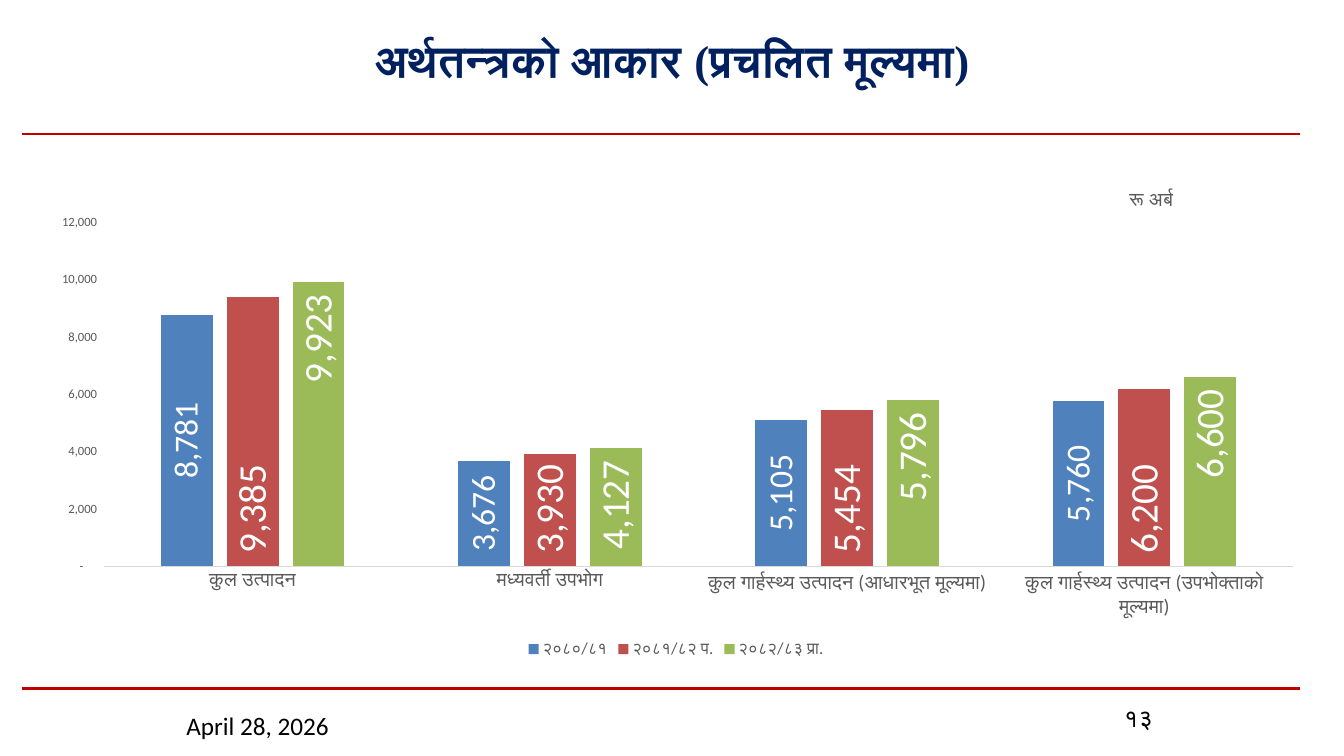
from dataclasses import dataclass
from typing import Any

from lxml.etree import SubElement
from pptx import Presentation
from pptx.chart.data import CategoryChartData as ChartData
from pptx.dml.color import RGBColor as RGB
from pptx.enum.chart import XL_CHART_TYPE as Kind
from pptx.enum.chart import XL_LABEL_POSITION as Spot
from pptx.enum.chart import XL_LEGEND_POSITION as Side
from pptx.enum.chart import XL_TICK_MARK as Tick
from pptx.enum.shapes import MSO_CONNECTOR as Line
from pptx.enum.text import MSO_ANCHOR as Anchor
from pptx.enum.text import PP_ALIGN as Align
from pptx.oxml.ns import qn
from pptx.util import Inches, Pt


@dataclass(frozen=True)
class Theme:
    navy: str = "002060"
    black: str = "000000"
    gray: str = "595959"
    white: str = "FFFFFF"
    rule: str = "C00000"
    axis: str = "D9D9D9"
    head: float = 32
    foot: float = 18
    unit: float = 14
    tick: float = 9
    key: float = 12
    font: str = "Calibri"


@dataclass(frozen=True)
class Note:
    text: str
    box: tuple[float, float, float, float]
    size: float
    color: str
    font: str
    bold: bool = False
    align: Any = Align.LEFT
    anchor: Any = Anchor.TOP


@dataclass(frozen=True)
class Year:
    name: str
    vals: tuple[int, ...]
    color: str
    spot: Any
    size: float


THEME = Theme()
NUM = '_(* #,##0_);_(* \\(#,##0\\);_(* "-"??_);_('

RULES = (1.33, 6.83)

NOTES = (
    Note("अर्थतन्त्रको आकार (प्रचलित मूल्यमा)", (2.17, 0.08, 9, 1.03), THEME.head,
         THEME.navy, "Times New Roman", True, Align.CENTER, Anchor.MIDDLE),
    Note("April 28, 2026", (1.75, 7, 2.17, 0.41), THEME.foot, THEME.black, THEME.font),
    Note("१३", (11, 6.92, 0.58, 0.48), THEME.foot, THEME.black, "Roboto",
         align=Align.CENTER),
)

GROUPS = (
    "कुल उत्पादन",
    "मध्यवर्ती उपभोग",
    "कुल गार्हस्थ्य उत्पादन (आधारभूत मूल्यमा)",
    "कुल गार्हस्थ्य उत्पादन (उपभोक्ताको मूल्यमा)",
)

YEARS = (
    Year("२०८०/८१", (8781, 3676, 5105, 5760), "4F81BD", Spot.CENTER, 24),
    Year("२०८१/८२ प.", (9385, 3930, 5454, 6200), "C0504D", Spot.INSIDE_BASE, 28),
    Year("२०८२/८३ प्रा.", (9923, 4127, 5796, 6600), "9BBB59", Spot.INSIDE_END, 28),
)


def apply(item: Any, form: dict[str, Any]) -> None:
    for name, val in form.items():
        setattr(item, name, val)


def style(font: Any, size: float, color: str, face: str = THEME.font,
          bold: bool = False) -> None:
    apply(font, {"size": Pt(size), "name": face, "bold": bold})
    font.color.rgb = RGB.from_string(color)


def draw_rule(slide: Any, top: float) -> None:
    rule = slide.shapes.add_connector(
        Line.STRAIGHT, Inches(0.22), Inches(top), Inches(12.89), Inches(top))
    rule.line.width = Pt(1.5)
    rule.line.color.rgb = RGB.from_string(THEME.rule)
    SubElement(rule._element.spPr, qn("a:effectLst"))


def draw_note(slide: Any, note: Note) -> None:
    frame = slide.shapes.add_textbox(*map(Inches, note.box)).text_frame
    apply(frame, {"word_wrap": True, "vertical_anchor": note.anchor})
    para = frame.paragraphs[0]
    para.alignment = note.align
    run = para.add_run()
    run.text = note.text
    style(run.font, note.size, note.color, note.font, note.bold)


def place(part: Any, index: int, form: dict[str, Any]) -> None:
    """Set a manual layout on a chart part."""
    for old in part.findall(qn("c:layout")):
        part.remove(old)
    lay = SubElement(part, qn("c:layout"))
    part.insert(index, lay)
    man = SubElement(lay, qn("c:manualLayout"))
    for name, val in form.items():
        SubElement(man, qn(f"c:{name}")).set("val", str(val))


def draw_bars(plot: Any) -> None:
    apply(plot, {"gap_width": 219, "overlap": -27, "vary_by_categories": False})
    for bars, year in zip(plot.series, YEARS):
        bars.format.fill.solid()
        bars.format.fill.fore_color.rgb = RGB.from_string(year.color)
        tags = bars.data_labels
        apply(tags, {"show_value": True, "position": year.spot,
                     "number_format": NUM, "number_format_is_linked": False})
        style(tags.font, year.size, THEME.white)
        # Turn the labels to read upward
        body = tags._element.find(qn("c:txPr")).find(qn("a:bodyPr"))
        body.set("rot", "-5400000")
        body.set("vert", "horz")


def draw_chart(slide: Any) -> None:
    data = ChartData(number_format=NUM)
    data.categories = GROUPS
    for year in YEARS:
        data.add_series(year.name, year.vals)
    box = map(Inches, (0.33, 1.58, 12.75, 5))
    chart = slide.shapes.add_chart(Kind.COLUMN_CLUSTERED, *box, data).chart
    style(chart.font, 10, THEME.black)
    draw_bars(chart.plots[0])

    # Axes
    base, scale = chart.category_axis, chart.value_axis
    marks = {"major_tick_mark": Tick.NONE, "minor_tick_mark": Tick.NONE,
             "has_major_gridlines": False}
    for axis, size in ((base, THEME.unit), (scale, THEME.tick)):
        apply(axis, marks)
        style(axis.tick_labels.font, size, THEME.gray)
    base.format.line.width = Pt(0.75)
    base.format.line.color.rgb = RGB.from_string(THEME.axis)
    scale.format.line.fill.background()
    apply(scale, {"minimum_scale": 0, "maximum_scale": 12000, "major_unit": 2000})
    apply(scale.tick_labels, {"number_format": NUM, "number_format_is_linked": False})

    # Legend
    chart.has_legend = True
    apply(chart.legend, {"position": Side.BOTTOM, "include_in_layout": False})
    style(chart.legend.font, THEME.key, THEME.gray)

    # Unit, set as the chart title
    chart.has_title = True
    title = chart.chart_title
    title.text_frame.text = "रू अर्ब"
    style(title.text_frame.paragraphs[0].runs[0].font, THEME.unit, THEME.gray)
    place(title._element, 1, {"xMode": "edge", "yMode": "edge", "x": 0.85, "y": 0.05})

    area = chart._chartSpace.chart.plotArea
    place(area, 0, {"layoutTarget": "inner", "xMode": "edge", "yMode": "edge",
                    "x": 0.055, "y": 0.125, "w": 0.925, "h": 0.683})


def main() -> None:
    deck = Presentation()
    apply(deck, {"slide_width": Inches(13.33), "slide_height": Inches(7.5)})
    slide = deck.slides.add_slide(deck.slide_layouts[6])
    for top in RULES:
        draw_rule(slide, top)
    for note in NOTES:
        draw_note(slide, note)
    draw_chart(slide)
    deck.save("out.pptx")


if __name__ == "__main__":
    main()
